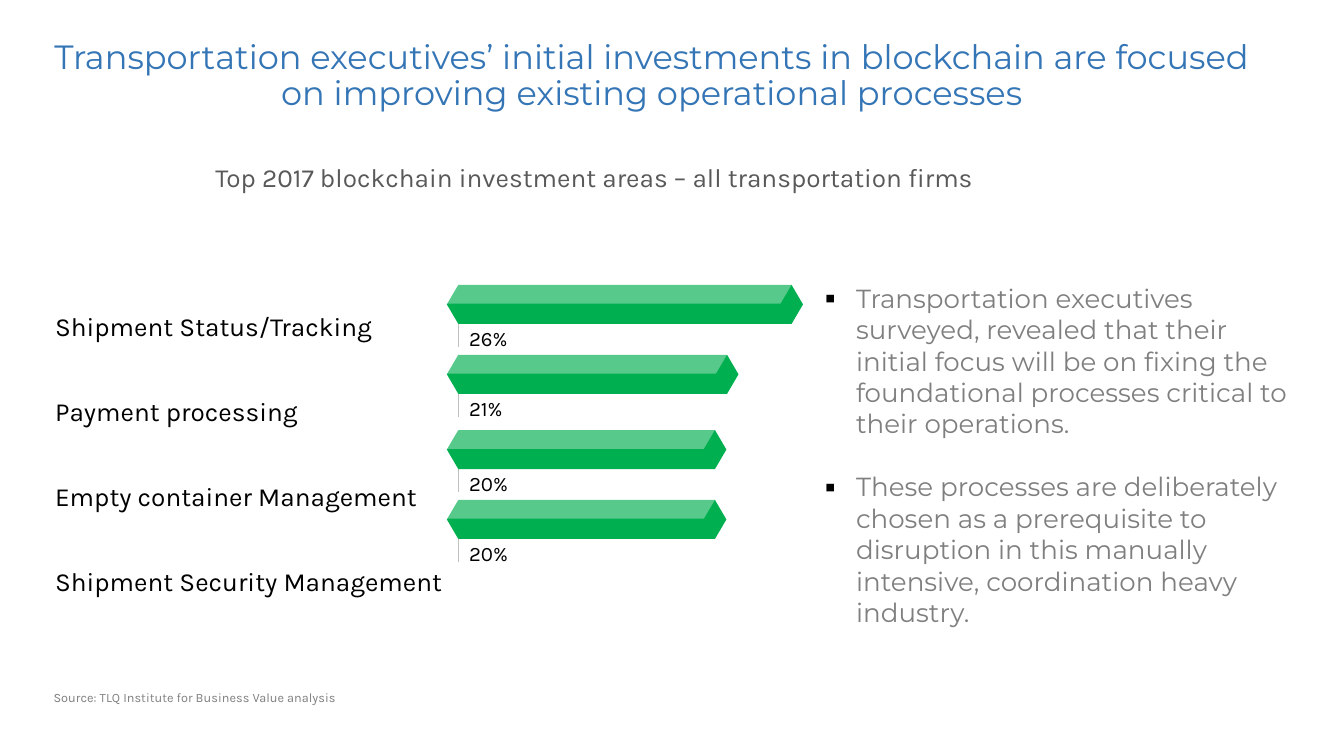
from lxml.etree import SubElement
from pptx import Presentation
from pptx.dml.color import RGBColor
from pptx.enum.shapes import MSO_CONNECTOR, MSO_SHAPE
from pptx.enum.text import MSO_ANCHOR, MSO_AUTO_SIZE, PP_ALIGN
from pptx.oxml.ns import qn
from pptx.util import Inches, Pt

GREEN = "00B050"
GREY = "7F7F7F"
BLACK = "000000"
LEFT = 3.41
TIP = 0.17
TALL = 0.29

BARS = [
    (2.12, 2.48, "26%"),
    (2.64, 2.0, "21%"),
    (3.2, 1.91, "20%"),
    (3.72, 1.91, "20%"),
]
AREAS = [
    "Shipment Status/Tracking",
    "Payment processing",
    "Empty container Management",
    "Shipment Security Management",
]
NOTES = [
    "Transportation executives surveyed, revealed that their initial focus will be "
    "on fixing the foundational processes critical to their operations.",
    "These processes are deliberately chosen as a prerequisite to disruption in this "
    "manually intensive, coordination heavy industry.",
]


def color(code):
    return RGBColor.from_string(code)


def place(box):
    return [Inches(n) for n in box]


def add_bullet(para):
    props = para._p.get_or_add_pPr()
    props.set("marL", str(Inches(0.23)))
    props.set("indent", str(-Inches(0.23)))
    tint = SubElement(props, qn("a:buClr"))
    SubElement(tint, qn("a:srgbClr"), val=BLACK)
    SubElement(props, qn("a:buFont"), typeface="Karla")
    SubElement(props, qn("a:buChar"), char="▪")


def write(shape, lines, size, font, code, inset=(0, 0, 0, 0), align=PP_ALIGN.LEFT,
          pitch=None, anchor=MSO_ANCHOR.TOP, bullet=False, gap=0):
    frame = shape.text_frame
    frame.word_wrap = True
    frame.auto_size = MSO_AUTO_SIZE.NONE
    frame.vertical_anchor = anchor
    (frame.margin_left, frame.margin_top,
     frame.margin_right, frame.margin_bottom) = place(inset)
    for i, line in enumerate(lines):
        para = frame.add_paragraph() if i else frame.paragraphs[0]
        if bullet:
            add_bullet(para)
        para.alignment = align
        if pitch:
            para.line_spacing = pitch
        para.space_before = Pt(gap if i else 0)
        run = para.add_run()
        run.text = line
        run.font.size = Pt(size)
        run.font.name = font
        run.font.color.rgb = color(code)


def add_text(slide, box, lines, *style, **opts):
    write(slide.shapes.add_textbox(*place(box)), lines, *style, **opts)


def add_block(slide, kind, box, code, alpha=None):
    shape = slide.shapes.add_shape(kind, *place(box))
    shape.shadow.inherit = False
    shape.fill.solid()
    shape.fill.fore_color.rgb = color(code)
    shape.line.fill.background()
    if alpha:
        tint = shape._element.spPr.find(".//" + qn("a:srgbClr"))
        SubElement(tint, qn("a:alpha"), val=str(alpha * 1000))


def add_tick(slide, x, top, end):
    line = slide.shapes.add_connector(MSO_CONNECTOR.STRAIGHT, *place((x, top, x, end)))
    line.line.color.rgb = color("BFBFBF")
    line.line.width = Pt(0.75)
    SubElement(line._element.spPr, qn("a:effectLst"))


def add_bar(slide, top, width, label):
    add_tick(slide, LEFT, top + 0.1, top + 0.46)
    add_text(slide, (3.49, top + 0.3, 0.43, 0.19), [label], 11, "Karla", BLACK,
             anchor=MSO_ANCHOR.MIDDLE)
    start = LEFT - TIP / 2
    add_block(slide, MSO_SHAPE.DIAMOND, (start, top, TIP, TALL), GREEN)
    add_block(slide, MSO_SHAPE.RECTANGLE, (LEFT, top, width, TALL), GREEN)
    add_block(slide, MSO_SHAPE.RECTANGLE, (3.29, top - 0.03, 5.43, 0.17), "FFFFFF", 34)
    add_block(slide, MSO_SHAPE.DIAMOND, (start + width, top, TIP, TALL), GREEN)


def add_title(slide, box, text):
    title = slide.shapes.title
    title.left, title.top, title.width, title.height = place(box)
    write(title, [text], 18, "Montserrat", "3475B6", align=PP_ALIGN.CENTER, pitch=0.9)


def main():
    deck = Presentation()
    deck.slide_width = Inches(10)
    deck.slide_height = Inches(10 * 9 / 16)
    slide = deck.slides.add_slide(deck.slide_layouts[5])
    add_title(slide, (0.4, 0.3, 8.9, 0.85),
              "Transportation executives’ initial investments in blockchain "
              "are focused on improving existing operational processes")
    add_text(slide, (0.3, 5.1, 8.99, 0.2),
             ["Source: TLQ Institute for Business Value analysis"],
             6.8, "Karla", GREY, inset=(0.1, 0.05, 0.1, 0.05), pitch=0.9)
    add_text(slide, (0.41, 1.87, 2.93, 2.12), AREAS, 14, "Karla", BLACK,
             inset=(0, 0.04, 0.04, 0.04), pitch=2.71)
    add_text(slide, (0.53, 1.1, 7.79, 0.34),
             ["Top 2017 blockchain investment areas – all transportation firms"],
             14, "Karla", "595959", inset=(0, 0.1, 0, 0), align=PP_ALIGN.CENTER)
    for bar in BARS:
        add_bar(slide, *bar)
    add_text(slide, (6.14, 2.03, 3.5, 2.39), NOTES, 14, "Montserrat", GREY,
             inset=(0, 0.07, 0, 0), bullet=True, gap=17)
    deck.save("out.pptx")


if __name__ == "__main__":
    main()
